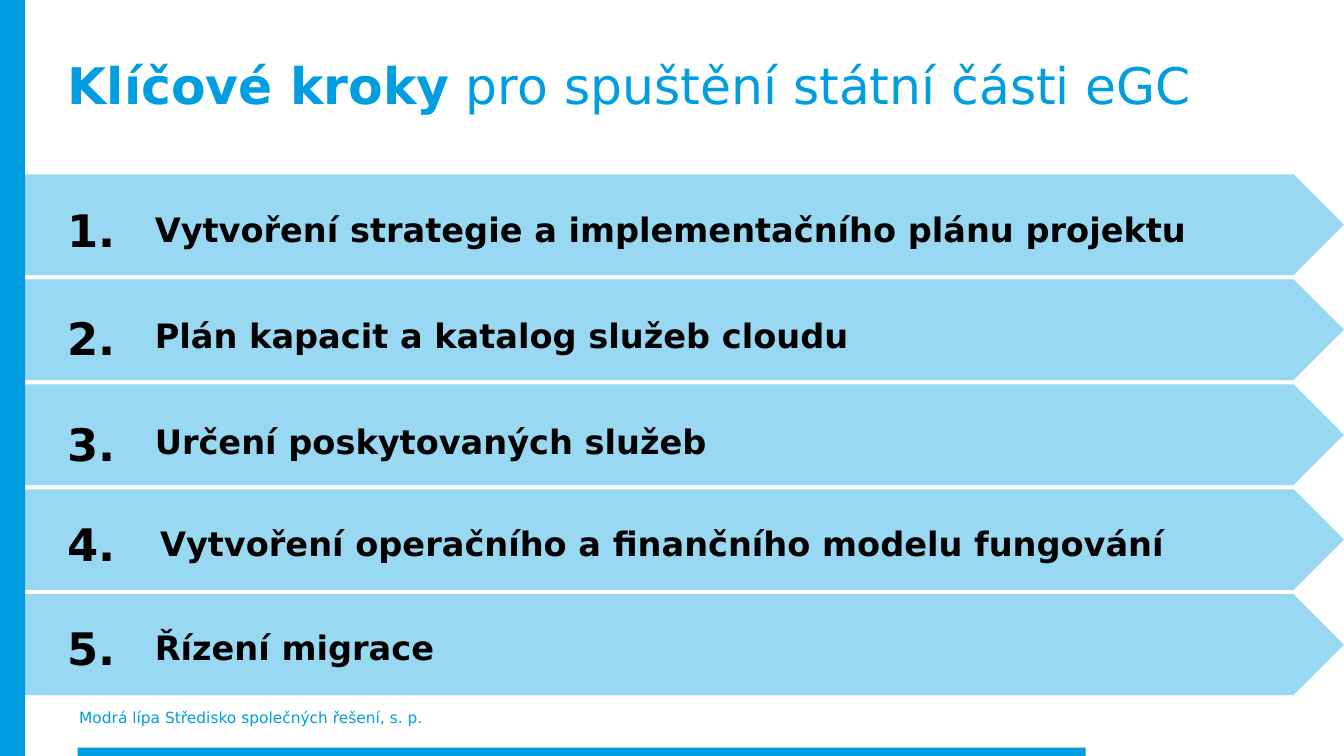
from dataclasses import dataclass

from lxml import etree
from pptx import Presentation
from pptx import util as u
from pptx.dml.color import RGBColor
from pptx.enum import shapes, text
from pptx.oxml.ns import qn

PX = 9525  # EMU per px, 96 px to the inch
WIDTH, HEIGHT = 1280, 720
FONT = "DejaVu Sans"
BLUE, BLACK = "009EE0", "000000"
FIRST_TOP, STEP, ARROW_HEIGHT = 166, 100, 96


@dataclass
class Area:
    left: int
    top: int
    width: int
    height: int

    def emu(self) -> list[int]:
        return [u.Emu(v * PX) for v in (self.left, self.top, self.width, self.height)]


@dataclass
class Step:
    label: str
    label_left: int
    label_drop: int  # label top below the arrow's top
    number_drop: int  # number top below the arrow's top


STEPS = [
    Step("Vytvoření strategie a implementačního plánu projektu", 138, 24, 17),
    Step("Plán kapacit a katalog služeb cloudu", 138, 25, 20),
    Step("Určení poskytovaných služeb", 138, 26, 21),
    Step("Vytvoření operačního a finančního modelu fungování", 143, 23, 16),
    Step("Řízení migrace", 138, 22, 15),
]


def colour(value: str) -> RGBColor:
    return RGBColor.from_string(value)


def style(para, size: int, value: str, bold: bool | None, spacing: float) -> None:
    para.line_spacing = spacing
    para.font.name = FONT
    para.font.size = u.Pt(size)
    para.font.color.rgb = colour(value)
    if bold is not None:
        para.font.bold = bold


def add_text(page, area: Area, words: str, size: int, value: str = BLACK,
             bold: bool = True, spacing: float = 1.1) -> None:
    box = page.shapes.add_textbox(*area.emu())
    box.text_frame.word_wrap = True
    para = box.text_frame.paragraphs[0]
    para.text = words
    style(para, size, value, bold, spacing)


def add_block(page, kind, area: Area, opacity: int = 100) -> None:
    block = page.shapes.add_shape(kind, *area.emu())
    block.shadow.inherit = False
    block.line.fill.background()
    block.fill.solid()
    block.fill.fore_color.rgb = colour(BLUE)
    if opacity < 100:
        fill = block._element.spPr.find(f"{qn('a:solidFill')}/{qn('a:srgbClr')}")
        etree.SubElement(fill, qn("a:alpha"), val=str(opacity * 1000))


def set_title(page, area: Area, strong: str, rest: str) -> None:
    title = page.shapes.title
    title.left, title.top, title.width, title.height = area.emu()
    frame = title.text_frame
    frame.word_wrap = True
    frame.auto_size = text.MSO_AUTO_SIZE.NONE
    frame.vertical_anchor = text.MSO_ANCHOR.TOP
    para = frame.paragraphs[0]
    para.alignment = text.PP_ALIGN.LEFT
    for words, bold in ((strong, True), (rest, False)):
        span = para.add_run()
        span.text = words
        span.font.bold = bold
    style(para, 36, BLUE, None, 1.2)


def main() -> None:
    deck = Presentation()
    deck.slide_width, deck.slide_height = u.Emu(WIDTH * PX), u.Emu(HEIGHT * PX)
    page = deck.slides.add_slide(deck.slide_layouts[5])
    rectangle = shapes.MSO_SHAPE.RECTANGLE

    # Title
    set_title(page, Area(55, 35, 1172, 72),
              "Klíčové kroky", " pro spuštění státní části eGC")

    # Footer
    add_text(page, Area(66, 670, 860, 28),
             "Modrá lípa Středisko společných řešení, s. p.", 11, BLUE, False, 1.0)
    add_block(page, rectangle, Area(74, 712, 960, 8))

    # Numbered arrows
    for index, step in enumerate(STEPS):
        top = FIRST_TOP + index * STEP
        add_block(page, shapes.MSO_SHAPE.PENTAGON,
                  Area(0, top, WIDTH, ARROW_HEIGHT), opacity=40)
        add_text(page, Area(step.label_left, top + step.label_drop, 1090, 72),
                 step.label, 24)
        add_text(page, Area(55, top + step.number_drop, 84, 78), f"{index + 1}.", 32)

    # Left band
    add_block(page, rectangle, Area(0, 0, 24, HEIGHT))

    deck.save("out.pptx")


if __name__ == "__main__":
    main()
